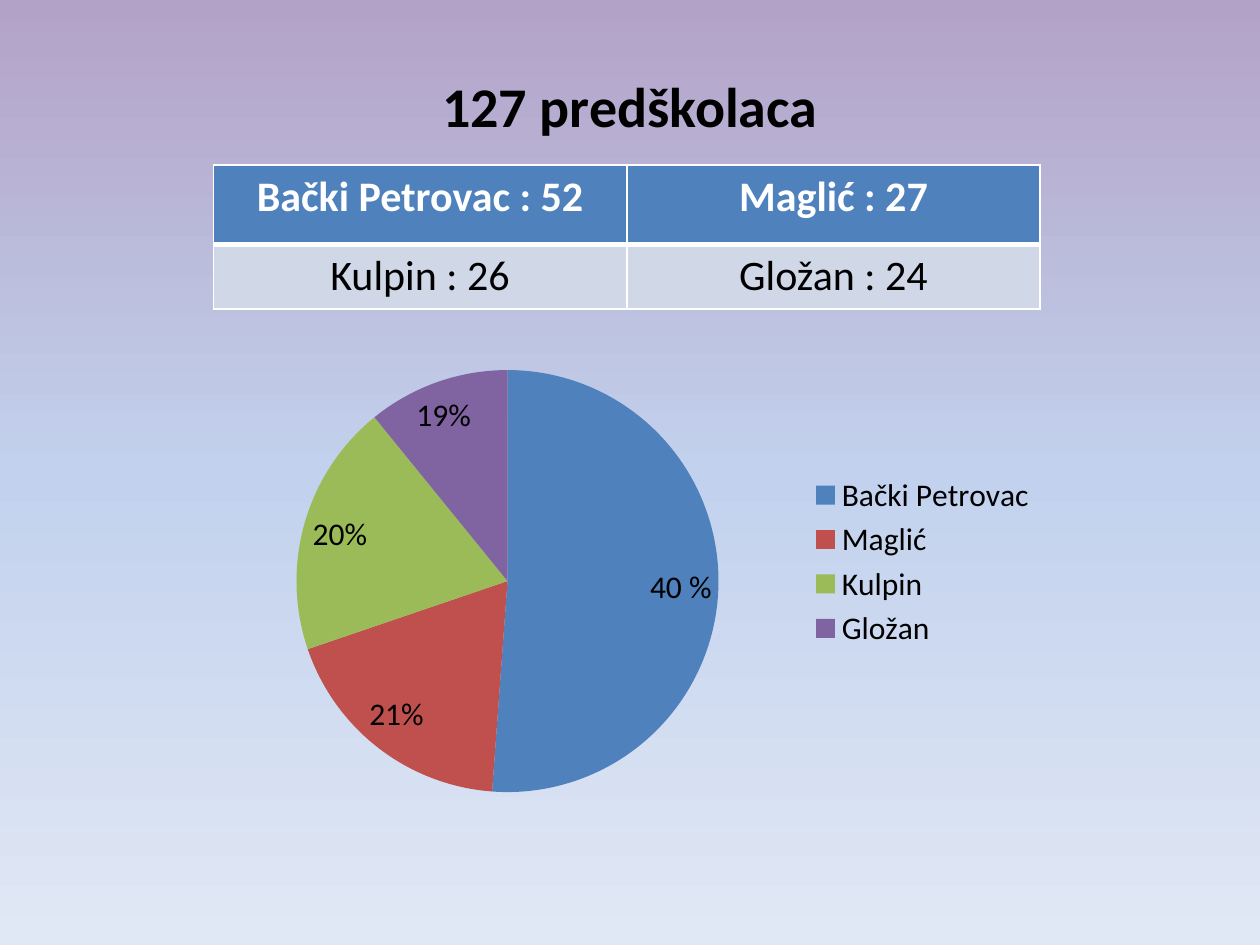
from dataclasses import dataclass

from lxml import etree
from pptx import Presentation
from pptx.chart.data import CategoryChartData
from pptx.dml.color import RGBColor
from pptx.enum.chart import XL_CHART_TYPE as ChartType
from pptx.enum.chart import XL_LABEL_POSITION as LabelPos
from pptx.enum.chart import XL_LEGEND_POSITION as LegendPos
from pptx.enum.text import PP_ALIGN as Align
from pptx.oxml import parse_xml
from pptx.oxml.ns import nsdecls, qn
from pptx.util import Cm, Pt

FONT = "Calibri"
BLACK = RGBColor(0x00, 0x00, 0x00)
WHITE = RGBColor(0xFF, 0xFF, 0xFF)
BLUE = RGBColor(0x4F, 0x81, 0xBD)
RED = RGBColor(0xC0, 0x50, 0x4D)
GREEN = RGBColor(0x9B, 0xBB, 0x59)
PURPLE = RGBColor(0x80, 0x64, 0xA2)
PALE_BLUE = RGBColor(0xD0, 0xD8, 0xE8)
BG_STOPS = (
    (0, RGBColor(0xB3, 0xA2, 0xC7)),
    (50, RGBColor(0xC2, 0xD1, 0xED)),
    (100, RGBColor(0xE1, 0xE8, 0xF5)),
)


@dataclass(frozen=True)
class Town:
    name: str
    children: int
    slice_value: int
    share: str
    color: RGBColor


@dataclass(frozen=True)
class RowStyle:
    height: Cm
    fill: RGBColor
    color: RGBColor
    bold: bool
    top: int
    bottom: int


TOWNS = (
    Town("Bački Petrovac", 52, 66, "40 %", BLUE),
    Town("Maglić", 27, 24, "21%", RED),
    Town("Kulpin", 26, 25, "20%", GREEN),
    Town("Gložan", 24, 14, "19%", PURPLE),
)
ROW_STYLES = (
    RowStyle(Cm(1.6), BLUE, WHITE, True, 1, 3),
    RowStyle(Cm(1.3), PALE_BLUE, BLACK, False, 3, 1),
)


def style_font(font, size: int, color: RGBColor = BLACK, bold: bool = False) -> None:
    font.name = FONT
    font.size = Pt(size)
    font.bold = bold
    font.color.rgb = color


def add_run(p, text: str, size: int, color: RGBColor = BLACK, bold: bool = False) -> None:
    r = p.add_run()
    r.text = text
    style_font(r.font, size, color, bold)


def set_background(s) -> None:
    fill = s.background.fill
    fill.gradient()
    fill.gradient_angle = 270
    stops = s.background._cSld.find(".//" + qn("a:gsLst"))
    for stop in list(stops):
        stops.remove(stop)
    for percent, color in BG_STOPS:
        stop = etree.SubElement(stops, qn("a:gs"), pos=str(percent * 1000))
        etree.SubElement(stop, qn("a:srgbClr"), val=str(color))


def add_title(s, text: str) -> None:
    sp = s.shapes.add_textbox(Cm(1.27), Cm(1.32), Cm(22.86), Cm(15.7))
    tf = sp.text_frame
    tf.word_wrap = True
    p = tf.paragraphs[0]
    p.alignment = Align.CENTER
    add_run(p, text, 32, bold=True)


def set_borders(cell, style: RowStyle) -> None:
    tc_pr = cell._tc.get_or_add_tcPr()
    widths = (("L", 1), ("R", 1), ("T", style.top), ("B", style.bottom))
    for i, (side, width) in enumerate(widths):
        tc_pr.insert(i, parse_xml(
            f'<a:ln{side} {nsdecls("a")} w="{Pt(width)}"><a:solidFill>'
            f'<a:srgbClr val="{WHITE}"/></a:solidFill></a:ln{side}>'
        ))


def add_town_table(s) -> None:
    cols = 2
    frame = s.shapes.add_table(
        len(ROW_STYLES), cols, Cm(4.3), Cm(3.33), Cm(16.67), Cm(2.9)
    )
    table = frame.table
    for i, style in enumerate(ROW_STYLES):
        table.rows[i].height = style.height
        for j, town in enumerate(TOWNS[i * cols:(i + 1) * cols]):
            cell = table.cell(i, j)
            cell.fill.solid()
            cell.fill.fore_color.rgb = style.fill
            set_borders(cell, style)
            p = cell.text_frame.paragraphs[0]
            p.alignment = Align.CENTER
            add_run(p, f"{town.name} : {town.children}", 24, style.color, style.bold)


def set_plot_layout(chart, **percents: float) -> None:
    area = chart._chartSpace.chart.plotArea
    for old in area.findall(qn("c:layout")):
        area.remove(old)
    sides = "".join(
        f'<c:{side} val="{percent / 100}"/>' for side, percent in percents.items()
    )
    area.insert(0, parse_xml(
        f'<c:layout {nsdecls("c")}><c:manualLayout><c:layoutTarget val="inner"/>'
        f'<c:xMode val="edge"/><c:yMode val="edge"/>{sides}'
        '</c:manualLayout></c:layout>'
    ))


def add_town_pie(s) -> None:
    data = CategoryChartData()
    data.categories = [town.name for town in TOWNS]
    data.add_series("Series 1", [town.slice_value for town in TOWNS])
    frame = s.shapes.add_chart(
        ChartType.PIE, Cm(4.23), Cm(6.32), Cm(16.93), Cm(10.01), data
    )
    chart = frame.chart
    style_font(chart.font, 18)
    chart.has_title = False
    chart.has_legend = True
    chart.legend.position = LegendPos.RIGHT
    chart.legend.include_in_layout = False
    set_plot_layout(chart, x=10.3, y=11.4, w=50.3, h=85)

    plot = chart.plots[0]
    plot.vary_by_categories = True
    series = plot.series[0]
    series.data_labels.show_value = True
    series.data_labels.position = LabelPos.BEST_FIT
    for i, town in enumerate(TOWNS):
        point = series.points[i]
        point.format.fill.solid()
        point.format.fill.fore_color.rgb = town.color
        label = point.data_label
        add_run(label.text_frame.paragraphs[0], town.share, 18)
        label.position = LabelPos.BEST_FIT


def main() -> None:
    prs = Presentation()
    prs.slide_width = Cm(25.4)
    prs.slide_height = Cm(19.05)
    s = prs.slides.add_slide(prs.slide_layouts[6])
    set_background(s)
    add_title(s, "127 predškolaca")
    add_town_table(s)
    add_town_pie(s)
    prs.save("out.pptx")


if __name__ == "__main__":
    main()
